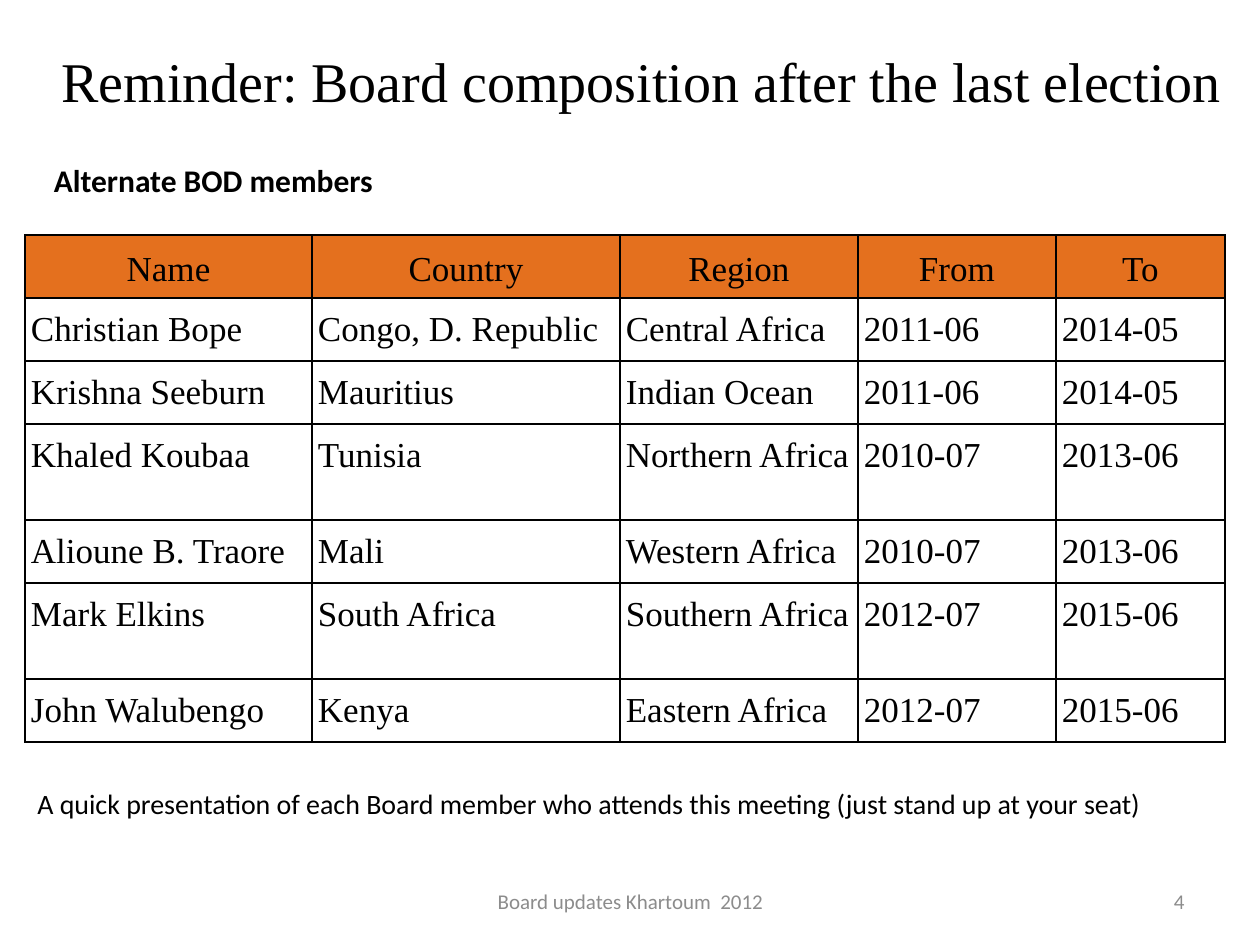
from lxml import etree
from pptx import Presentation
from pptx import util as u
from pptx.dml.color import RGBColor
from pptx.enum import text
from pptx.oxml.ns import qn

EMU_PER_PX = 914400 / 126

BLACK = RGBColor(0x00, 0x00, 0x00)
WHITE = RGBColor(0xFF, 0xFF, 0xFF)
GRAY = RGBColor(0x8C, 0x8C, 0x8C)
ORANGE = RGBColor(0xE4, 0x70, 0x1E)

SERIF = "Times New Roman"
SANS = "Calibri"
LEFT, CENTER, RIGHT = text.PP_ALIGN.LEFT, text.PP_ALIGN.CENTER, text.PP_ALIGN.RIGHT
TOP, MIDDLE = text.MSO_ANCHOR.TOP, text.MSO_ANCHOR.MIDDLE

COLUMN_WIDTHS = [287, 308, 238, 198, 169]
ROW_HEIGHT, TALL_ROW_HEIGHT = 63, 96
TALL_ROWS = (3, 5)
CELL_MARGIN = 6

MEMBERS = [
    ("Name", "Country", "Region", "From", "To"),
    ("Christian Bope", "Congo, D. Republic", "Central Africa", "2011-06", "2014-05"),
    ("Krishna Seeburn", "Mauritius", "Indian Ocean", "2011-06", "2014-05"),
    ("Khaled Koubaa", "Tunisia", "Northern Africa", "2010-07", "2013-06"),
    ("Alioune B. Traore", "Mali", "Western Africa", "2010-07", "2013-06"),
    ("Mark Elkins", "South Africa", "Southern Africa", "2012-07", "2015-06"),
    ("John Walubengo", "Kenya", "Eastern Africa", "2012-07", "2015-06"),
]


def px(length):
    return u.Emu(round(length * EMU_PER_PX))


def style_paragraph(paragraph, size, font, color, align=LEFT, bold=False):
    paragraph.alignment = align
    paragraph.font.size = u.Pt(size)
    paragraph.font.name = font
    paragraph.font.bold = bold
    paragraph.font.color.rgb = color


def add_text(slide, box, words, size, font=SANS, color=BLACK, align=LEFT,
             anchor=MIDDLE, bold=False):
    shape = slide.shapes.add_textbox(*map(px, box))
    frame = shape.text_frame
    frame.word_wrap = True
    frame.vertical_anchor = anchor
    frame.text = words
    style_paragraph(frame.paragraphs[0], size, font, color, align, bold)


def add_borders(cell):
    properties = cell._tc.get_or_add_tcPr()
    for side in ("lnL", "lnR", "lnT", "lnB"):
        line = etree.SubElement(properties, qn(f"a:{side}"), w=str(u.Pt(1)))
        fill = etree.SubElement(line, qn("a:solidFill"))
        etree.SubElement(fill, qn("a:srgbClr"), val=str(BLACK))


def fill_cell(cell, words, is_header):
    add_borders(cell)
    cell.fill.solid()
    cell.fill.fore_color.rgb = ORANGE if is_header else WHITE
    cell.margin_left = cell.margin_right = px(CELL_MARGIN)
    cell.margin_top = cell.margin_bottom = px(CELL_MARGIN)
    cell.vertical_anchor = MIDDLE if is_header else TOP
    cell.text = words
    paragraph = cell.text_frame.paragraphs[0]
    paragraph.line_spacing = 1.15
    style_paragraph(paragraph, 20, SERIF, BLACK, CENTER if is_header else LEFT)


def add_member_table(slide, left, top):
    heights = [TALL_ROW_HEIGHT if row in TALL_ROWS else ROW_HEIGHT
               for row in range(len(MEMBERS))]
    table = slide.shapes.add_table(
        len(MEMBERS), len(COLUMN_WIDTHS), px(left), px(top),
        px(sum(COLUMN_WIDTHS)), px(sum(heights))).table
    table.horz_banding = False
    for column, width in zip(table.columns, COLUMN_WIDTHS):
        column.width = px(width)
    for row, height in zip(table.rows, heights):
        row.height = px(height)
    for row_index, member in enumerate(MEMBERS):
        for column_index, words in enumerate(member):
            fill_cell(table.cell(row_index, column_index), words, row_index == 0)


def main():
    presentation = Presentation()
    presentation.slide_width, presentation.slide_height = px(1260), px(945)
    slide = presentation.slides.add_slide(presentation.slide_layouts[6])

    # Title and subtitle
    add_text(slide, (49, 27, 1211, 107),
             "Reminder: Board composition after the last election", 32, SERIF)
    add_text(slide, (25, 156, 377, 48), "Alternate BOD members", 18,
             align=CENTER, bold=True)

    # Board members
    add_member_table(slide, 25, 235)

    # Closing remark
    add_text(slide, (25, 780, 1200, 47),
             "A quick presentation of each Board member who attends this meeting "
             "(just stand up at your seat)", 16, anchor=TOP)

    # Footer and slide number
    add_text(slide, (431, 876, 399, 50), "Board updates Khartoum  2012", 12,
             color=GRAY, align=CENTER)
    add_text(slide, (903, 876, 294, 50), "4", 12, color=GRAY, align=RIGHT)

    presentation.save("out.pptx")


if __name__ == "__main__":
    main()
